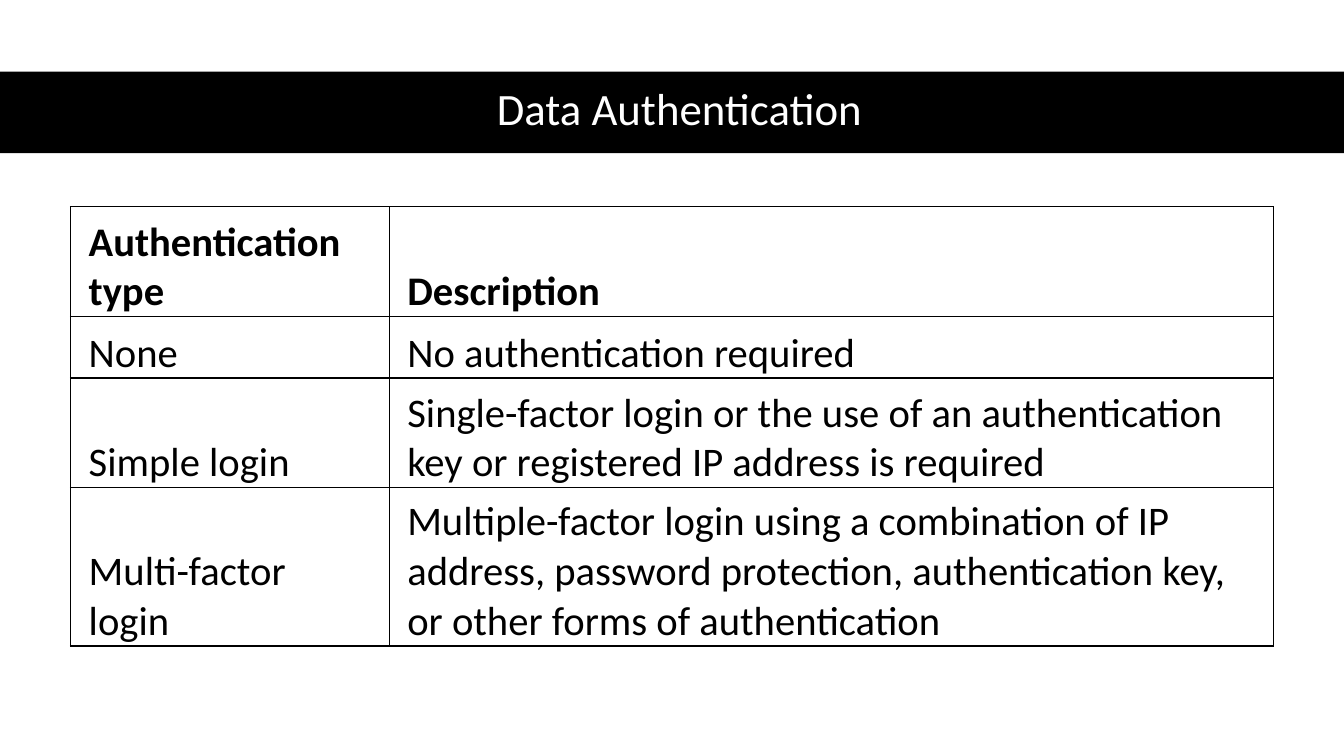
import pptx
import pptx.util
import pptx.dml.color
import pptx.enum.shapes
import pptx.enum.text
import pptx.oxml
import pptx.oxml.ns

PX = 9144  # EMU per px, 100 px to the inch
FONT = "Calibri"
BLACK, WHITE = "000000", "FFFFFF"

COLUMNS = [316, 877]
ROW_HEIGHTS = [109, 61, 109, 157]
ROWS = [
    ("Authentication type", "Description"),
    ("None", "No authentication required"),
    ("Simple login",
     "Single-factor login or the use of an authentication key "
     "or registered IP address is required"),
    ("Multi-factor login",
     "Multiple-factor login using a combination of IP address, password "
     "protection, authentication key, or other forms of authentication"),
]


def px(n):
    return pptx.util.Emu(n * PX)


def color(value):
    return pptx.dml.color.RGBColor.from_string(value)


def add_run(p, text, size, hex_color, bold=False):
    r = p.add_run()
    r.text = text
    r.font.name = FONT
    r.font.size = pptx.util.Pt(size)
    r.font.bold = bold
    r.font.color.rgb = color(hex_color)


def set_borders(cell, hex_color, width):
    tc_pr = cell._tc.get_or_add_tcPr()
    for i, side in enumerate(("lnL", "lnR", "lnT", "lnB")):
        tc_pr.insert(i, pptx.oxml.parse_xml(
            f'<a:{side} {pptx.oxml.ns.nsdecls("a")} w="{pptx.util.Pt(width)}">'
            f'<a:solidFill><a:srgbClr val="{hex_color}"/></a:solidFill>'
            f'</a:{side}>'))


def title_band(s, x, y, w, h, text):
    # Black bar, placed behind the title
    band = s.shapes.add_shape(pptx.enum.shapes.MSO_SHAPE.RECTANGLE,
                              px(x), px(y), px(w), px(h))
    band.shadow.inherit = False
    band.fill.solid()
    band.fill.fore_color.rgb = color(BLACK)
    band.line.fill.background()
    s.shapes._spTree.insert(2, band._element)

    # Title text
    title = s.shapes.title
    title.left, title.top = px(x + 61), px(y - 1)
    title.width, title.height = px(w - 107), px(h)
    tf = title.text_frame
    tf.word_wrap = True
    tf.vertical_anchor = pptx.enum.text.MSO_ANCHOR.MIDDLE
    p = tf.paragraphs[0]
    p.alignment = pptx.enum.text.PP_ALIGN.CENTER
    p.line_spacing = 0.9
    add_run(p, text, 32, WHITE)


def authentication_table(s, x, y):
    table = s.shapes.add_table(len(ROWS), len(COLUMNS), px(x), px(y),
                               px(sum(COLUMNS)), px(sum(ROW_HEIGHTS))).table
    table.horz_banding = False
    table.first_row = False
    for column, width in zip(table.columns, COLUMNS):
        column.width = px(width)
    for row, height in zip(table.rows, ROW_HEIGHTS):
        row.height = px(height)

    # Cells: bold header row, text at the bottom
    for i, texts in enumerate(ROWS):
        for j, text in enumerate(texts):
            cell = table.cell(i, j)
            cell.fill.background()
            cell.vertical_anchor = pptx.enum.text.MSO_ANCHOR.BOTTOM
            cell.margin_left = cell.margin_right = px(18)
            cell.margin_top, cell.margin_bottom = px(3), px(0)
            add_run(cell.text_frame.paragraphs[0], text, 29, BLACK, bold=i == 0)
            set_borders(cell, BLACK, 1)


def main():
    prs = pptx.Presentation()
    prs.slide_width, prs.slide_height = px(1333), px(750)
    s = prs.slides.add_slide(prs.slide_layouts[5])
    s.background.fill.solid()
    s.background.fill.fore_color.rgb = color(WHITE)
    title_band(s, 0, 71, 1333, 81, "Data Authentication")
    authentication_table(s, 70, 205)
    prs.save("out.pptx")


if __name__ == "__main__":
    main()
